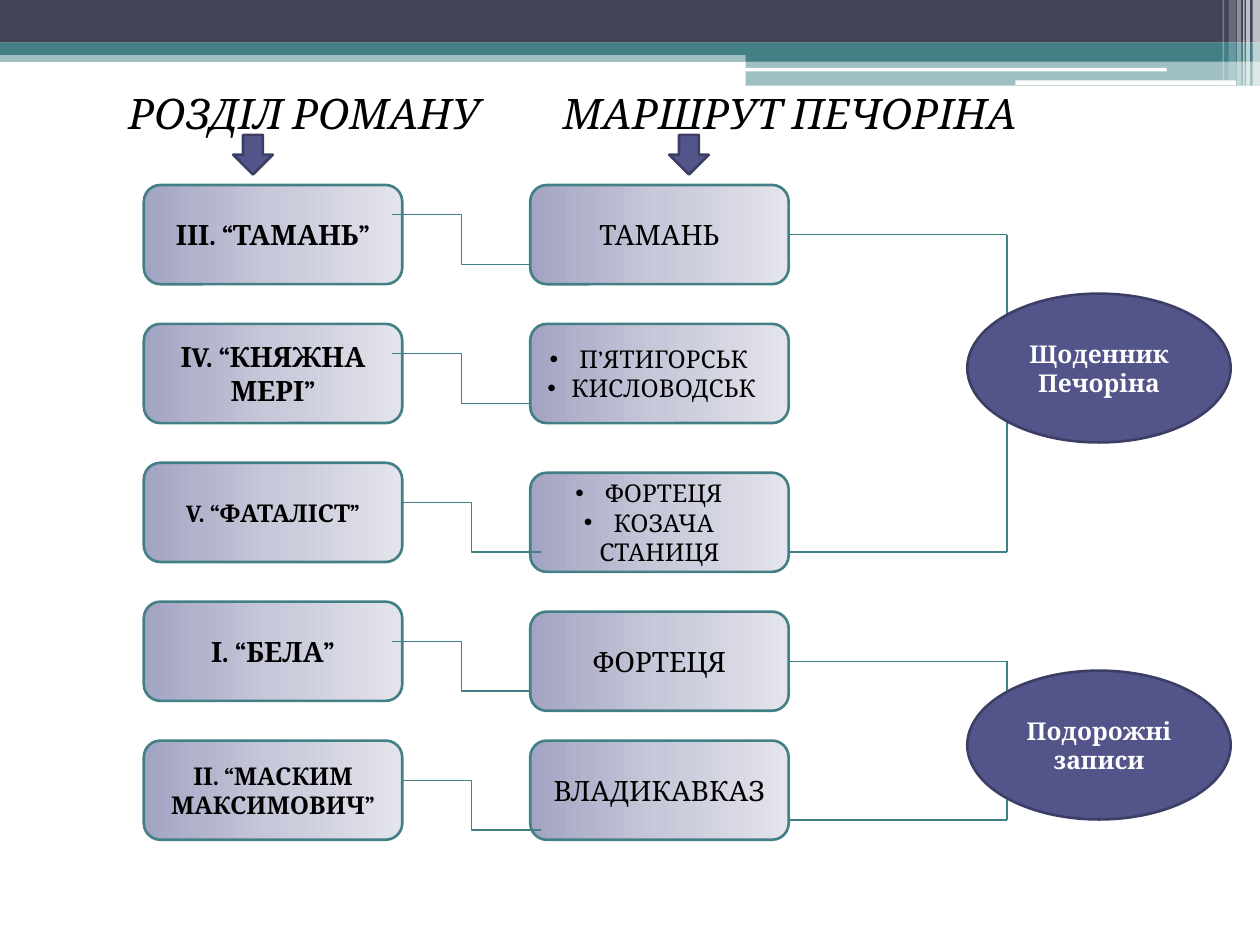
import copy

import pptx
import pptx.dml.color
import pptx.enum.shapes
import pptx.enum.text
import pptx.oxml
import pptx.oxml.ns
import pptx.util

Cm = pptx.util.Cm
Pt = pptx.util.Pt
RGBColor = pptx.dml.color.RGBColor
SHAPE = pptx.enum.shapes.MSO_SHAPE
CONNECTOR = pptx.enum.shapes.MSO_CONNECTOR
ALIGN = pptx.enum.text.PP_ALIGN
ANCHOR = pptx.enum.text.MSO_ANCHOR
qn = pptx.oxml.ns.qn

FONT = "Cambria"
BLACK = RGBColor(0x00, 0x00, 0x00)
WHITE = RGBColor(0xFF, 0xFF, 0xFF)
SLATE = RGBColor(0x42, 0x44, 0x56)
TEAL = RGBColor(0x43, 0x80, 0x86)
INDIGO = RGBColor(0x53, 0x54, 0x8A)
DARK_INDIGO = RGBColor(0x3D, 0x3E, 0x66)
CARD_STOPS = (
    (0, RGBColor(0xA3, 0xA4, 0xC3)),
    (0.5, RGBColor(0xC7, 0xC8, 0xD9)),
    (1, RGBColor(0xE4, 0xE4, 0xEC)),
)

SLIDE_W, SLIDE_H = 25.4, 19.05
CARD_W, CARD_H = 5.21, 2
CHAPTER_X, PLACE_X = 2.9, 10.69
FIRST_ROW, ROW_STEP = 3.73, 2.8
LINK_W, LINK_H = 2.8, 1
BRACKET_LEFT, BRACKET_RIGHT = 15.9, 20.3

# left, top, width, height, colour, opacity in percent
HEADER_BANDS = (
    (0, 1.02, SLIDE_W, 0.23, TEAL, 50),
    (0, 0, SLIDE_W, 0.86, SLATE, 100),
    (0, 0.86, SLIDE_W, 0.25, TEAL, 100),
    (15.03, 0.99, 10.37, 0.25, TEAL, 100),
    (15.03, 1.23, 10.37, 0.5, TEAL, 50),
    (15.01, 1.37, 8.51, 0.07, WHITE, 100),
    (20.47, 1.62, 4.45, 0.1, WHITE, 100),
    (25.25, 0, 0.15, 1.73, WHITE, 65),
    (25.12, 0, 0.08, 1.73, WHITE, 65),
    (25.06, 0, 0.03, 1.73, WHITE, 60),
    (24.94, 0, 0.08, 1.73, WHITE, 40),
    (24.77, 0, 0.15, 1.63, WHITE, 20),
    (24.65, 0, 0.03, 1.63, WHITE, 30),
)

# chapter, its size, places, their size, lowering of the places card,
# start of the link (x, distance below the top of the row)
ROUTE = (
    ("ІІІ. “ТАМАНЬ”", 16, ["ТАМАНЬ"], 16, 0, (7.9, 0.6)),
    ("ІV. “КНЯЖНА МЕРІ”", 16, ["П’ЯТИГОРСЬК", "КИСЛОВОДСЬК"], 14, 0, (7.9, 0.6)),
    ("V. “ФАТАЛІСТ”", 14, ["ФОРТЕЦЯ", "КОЗАЧА СТАНИЦЯ"], 14, 0.2, (8.1, 0.8)),
    ("І. “БЕЛА”", 16, ["ФОРТЕЦЯ"], 16, 0.2, (7.9, 0.8)),
    ("ІІ. “МАСКИМ МАКСИМОВИЧ”", 14, ["ВЛАДИКАВКАЗ"], 16, 0, (8.1, 0.8)),
)

# source, top of its ellipse, top and bottom of its bracket
SOURCES = (
    ("Щоденник Печоріна", 5.92, 4.73, 11.13),
    ("Подорожні записи", 13.52, 13.33, 16.53),
)


def write_text(shape, lines, *, size, color=BLACK, bold=False, italic=False,
               align=ALIGN.CENTER, anchor=ANCHOR.MIDDLE, bullets=False, tab=None):
    frame = shape.text_frame
    frame.word_wrap = True
    frame.vertical_anchor = anchor
    for index, line in enumerate(lines):
        paragraph = frame.add_paragraph() if index else frame.paragraphs[0]
        paragraph.text = line
        paragraph.alignment = align
        properties = paragraph._p.get_or_add_pPr()
        if bullets:
            pptx.oxml.ns  # bullets follow the text, without a hanging indent
            bullet_font = properties.makeelement(qn("a:buFont"), {"typeface": "Arial"})
            bullet = properties.makeelement(qn("a:buChar"), {"char": "•"})
            properties.extend([bullet_font, bullet])
        if tab is not None:
            tabs = properties.makeelement(qn("a:tabLst"), {})
            tabs.append(tabs.makeelement(qn("a:tab"), {"pos": str(Cm(tab)), "algn": "l"}))
            properties.append(tabs)
        for run in paragraph.runs:
            run.font.name = FONT
            run.font.size = Pt(size)
            run.font.bold = bold
            run.font.italic = italic
            run.font.color.rgb = color


def add_figure(slide, kind, left, top, width, height, *, fill=None, opacity=100, line=None):
    figure = slide.shapes.add_shape(kind, Cm(left), Cm(top), Cm(width), Cm(height))
    figure.shadow.inherit = False
    if fill is not None:
        figure.fill.solid()
        figure.fill.fore_color.rgb = fill
    if opacity < 100:
        color = figure._element.spPr.find(".//" + qn("a:srgbClr"))
        color.append(color.makeelement(qn("a:alpha"), {"val": str(opacity * 1000)}))
    if line is None:
        figure.line.fill.background()
    else:
        figure.line.color.rgb = line
        figure.line.width = Pt(1.5)
    return figure


def add_card(slide, left, top, lines, **text_format):
    card = add_figure(slide, SHAPE.ROUNDED_RECTANGLE, left, top, CARD_W, CARD_H, line=TEAL)
    card.fill.gradient()
    card.fill.gradient_angle = 0
    stop_list = card._element.spPr.find(".//" + qn("a:gsLst"))
    stop_list.insert(1, copy.deepcopy(stop_list[0]))
    for stop, (position, color) in zip(card.fill.gradient_stops, CARD_STOPS):
        stop.position = position
        stop.color.rgb = color
    write_text(card, lines, **text_format)


def add_link(slide, kind, start, end):
    link = slide.shapes.add_connector(kind, *(Cm(value) for value in (*start, *end)))
    link.line.color.rgb = TEAL
    link.line.width = Pt(0.75)
    properties = link._element.spPr
    properties.append(properties.makeelement(qn("a:effectLst"), {}))


def add_headings(slide):
    """Both column headings share one line, split by a tab stop."""
    headings = slide.shapes.add_textbox(0, Cm(1.63), Cm(SLIDE_W), Cm(1.3))
    headings.text_frame.margin_left = Cm(2.59)
    write_text(headings, ["РОЗДІЛ РОМАНУ\tМАРШРУТ ПЕЧОРІНА"], size=24, italic=True,
               align=ALIGN.LEFT, anchor=ANCHOR.TOP, tab=8.76)


def add_route(slide):
    rows = [FIRST_ROW + ROW_STEP * index for index in range(len(ROUTE))]
    for top, (chapter, chapter_size, places, place_size, lowering, _) in zip(rows, ROUTE):
        add_card(slide, CHAPTER_X, top, [chapter], size=chapter_size, bold=True)
        add_card(slide, PLACE_X, top + lowering, places, size=place_size,
                 bullets=len(places) > 1)
    for top, (*_, (link_x, link_drop)) in zip(rows, ROUTE):
        link_y = top + link_drop
        add_link(slide, CONNECTOR.ELBOW, (link_x, link_y), (link_x + LINK_W, link_y + LINK_H))


def add_bracket(slide, top, bottom):
    corners = ((BRACKET_LEFT, top), (BRACKET_RIGHT, top),
               (BRACKET_RIGHT, bottom), (BRACKET_LEFT, bottom))
    for start, end in zip(corners, corners[1:]):
        add_link(slide, CONNECTOR.STRAIGHT, start, end)


def main():
    deck = pptx.Presentation()
    deck.slide_width, deck.slide_height = Cm(SLIDE_W), Cm(SLIDE_H)
    slide = deck.slides.add_slide(deck.slide_layouts[6])

    for *box, color, opacity in HEADER_BANDS:
        add_figure(slide, SHAPE.RECTANGLE, *box, fill=color, opacity=opacity)
    add_headings(slide)
    add_route(slide)
    for _, _, top, bottom in SOURCES:
        add_bracket(slide, top, bottom)
    for arrow_x in (4.7, 13.49):
        add_figure(slide, SHAPE.DOWN_ARROW, arrow_x, 2.72, 0.8, 0.8,
                   fill=INDIGO, line=DARK_INDIGO)
    for source, top, _, _ in SOURCES:
        ellipse = add_figure(slide, SHAPE.OVAL, 19.5, top, 5.31, 3,
                             fill=INDIGO, line=DARK_INDIGO)
        write_text(ellipse, [source], size=14, bold=True, color=WHITE)

    deck.save("out.pptx")


if __name__ == "__main__":
    main()
